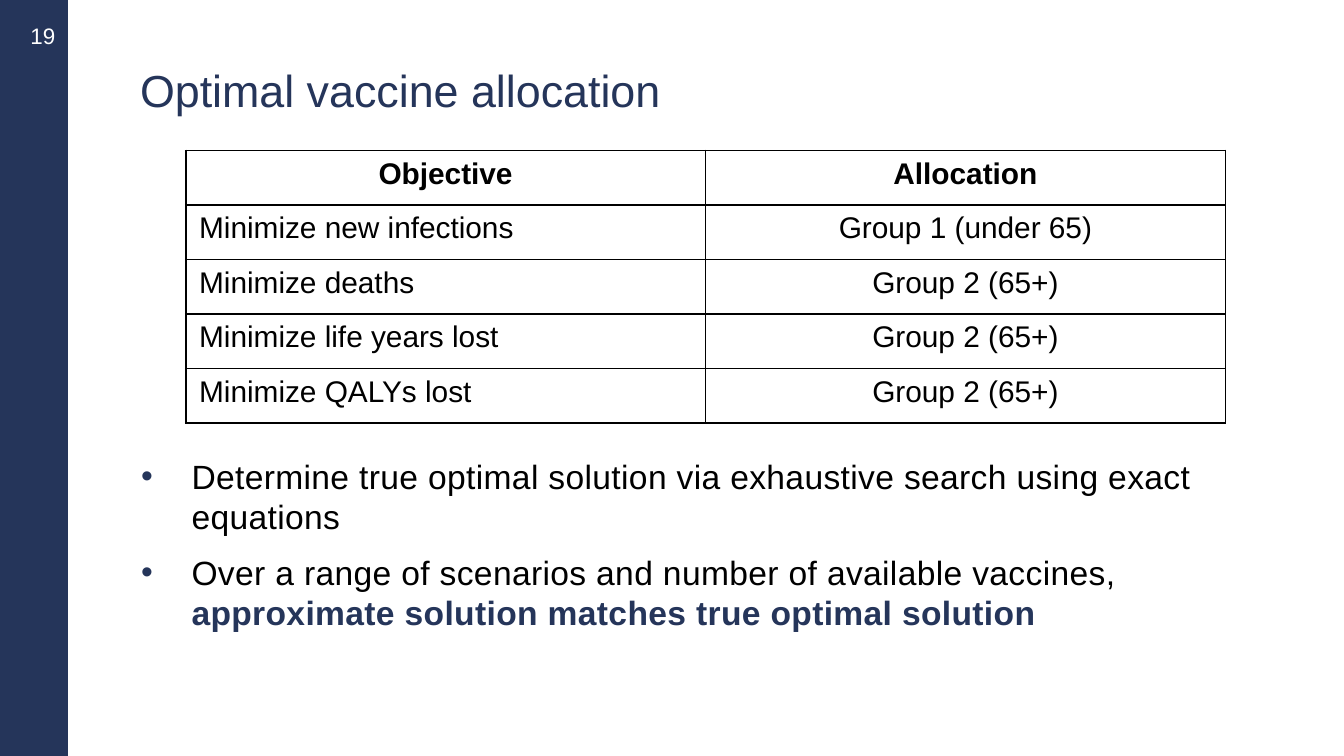
from pptx import Presentation
from pptx.dml.color import RGBColor
from pptx.enum.shapes import MSO_SHAPE
from pptx.enum.text import MSO_ANCHOR, MSO_AUTO_SIZE, PP_ALIGN
from pptx.oxml import parse_xml
from pptx.oxml.ns import nsdecls
from pptx.util import Pt

RECT = MSO_SHAPE.RECTANGLE
LEFT, CENTER = PP_ALIGN.LEFT, PP_ALIGN.CENTER
TOP, MIDDLE, BOTTOM = MSO_ANCHOR.TOP, MSO_ANCHOR.MIDDLE, MSO_ANCHOR.BOTTOM
NO_FIT = MSO_AUTO_SIZE.NONE

NAVY, BLACK, WHITE = "25355A", "000000", "FFFFFF"


def rgb(value):
    return RGBColor.from_string(value)


class Deck:
    font = "Arial"

    def __init__(self, width, height):
        self.prs = Presentation()
        self.prs.slide_width, self.prs.slide_height = Pt(width), Pt(height)
        self.s = self.prs.slides.add_slide(self.prs.slide_layouts[1])

    def place(self, sp, x, y, w, h):
        sp.left, sp.top, sp.width, sp.height = Pt(x), Pt(y), Pt(w), Pt(h)

    def frame(self, tf, anchor, insets, wrap=True):
        tf.auto_size = NO_FIT
        tf.word_wrap = wrap
        tf.vertical_anchor = anchor
        (tf.margin_left, tf.margin_top,
         tf.margin_right, tf.margin_bottom) = map(Pt, insets)

    def style(self, r, size, color, bold=False):
        r.font.name, r.font.size, r.font.bold = self.font, Pt(size), bold
        r.font.color.rgb = rgb(color)

    def band(self, x, y, w, h, color):
        sp = self.s.shapes.add_shape(RECT, Pt(x), Pt(y), Pt(w), Pt(h))
        sp.shadow.inherit = False
        sp.fill.solid()
        sp.fill.fore_color.rgb = rgb(color)
        sp.line.color.rgb = rgb(color)
        sp.line.width = Pt(0.75)

    def label(self, text, x, y, w, h, size, color):
        tf = self.s.shapes.add_textbox(Pt(x), Pt(y), Pt(w), Pt(h)).text_frame
        self.frame(tf, MIDDLE, (3.6, 0, 3.6, 0), wrap=False)
        tf.text = text
        p = tf.paragraphs[0]
        p.alignment = CENTER
        self.style(p.runs[0], size, color)

    def title(self, text, x, y, w, h):
        sp = self.s.shapes.title
        self.place(sp, x, y, w, h)
        tf = sp.text_frame
        self.frame(tf, BOTTOM, (0, 3.6, 7.2, 3.6))
        tf.text = text
        p = tf.paragraphs[0]
        p.alignment, p.line_spacing = LEFT, 0.85
        self.style(p.runs[0], 24, NAVY)

    def table(self, rows, x, y, w, h):
        tbl = self.s.shapes.add_table(
            len(rows), len(rows[0]), Pt(x), Pt(y), Pt(w), Pt(h)).table
        for i, row in enumerate(rows):
            for j, text in enumerate(row):
                cell = tbl.cell(i, j)
                cell.text = text
                p = cell.text_frame.paragraphs[0]
                p.alignment = CENTER if i == 0 or j > 0 else LEFT
                self.style(p.runs[0], 16, BLACK, bold=i == 0)
                self.borders(cell, BLACK)
                cell.fill.solid()
                cell.fill.fore_color.rgb = rgb(WHITE)

    def borders(self, cell, color):
        tcPr = cell._tc.get_or_add_tcPr()
        for side in ("lnL", "lnR", "lnT", "lnB"):
            tcPr.append(parse_xml(
                f'<a:{side} {nsdecls("a")} w="{Pt(1)}"><a:solidFill>'
                f'<a:srgbClr val="{color}"/></a:solidFill></a:{side}>'))

    def bullets(self, items, x, y, w, h):
        """Each item is a list of (text, color, bold) pieces."""
        sp = self.s.placeholders[1]
        self.place(sp, x, y, w, h)
        tf = sp.text_frame
        self.frame(tf, TOP, (0, 3.6, 0, 3.6))
        for i, pieces in enumerate(items):
            p = tf.add_paragraph() if i else tf.paragraphs[0]
            self.bullet(p, NAVY)
            p.space_before = Pt(4 if i else 0)
            p.space_after = Pt(4.3)
            for text, color, bold in pieces:
                r = p.add_run()
                r.text = text
                self.style(r, 18, color, bold)
                r._r.get_or_add_rPr().set("spc", "20")

    def bullet(self, p, color):
        pPr = p._p.get_or_add_pPr()
        pPr.set("marL", str(Pt(27)))
        pPr.set("indent", str(-Pt(27)))
        pPr.append(parse_xml(
            f'<a:buClr {nsdecls("a")}><a:srgbClr val="{color}"/></a:buClr>'))
        pPr.append(parse_xml(f'<a:buChar {nsdecls("a")} char="•"/>'))


def main():
    deck = Deck(720, 405)

    # Side band with page number
    deck.band(0, 0, 36, 405, NAVY)
    deck.label("19", 5, 1, 36, 36, 12, WHITE)

    # Title
    deck.title("Optimal vaccine allocation", 75, 28, 607, 38)

    # Allocation by objective
    older = "Group 2 (65+)"
    deck.table([
        ("Objective", "Allocation"),
        ("Minimize new infections", "Group 1 (under 65)"),
        ("Minimize deaths", older),
        ("Minimize life years lost", older),
        ("Minimize QALYs lost", older),
    ], 99.5, 80.6, 557, 146)

    # Findings
    deck.bullets([
        [("Determine true optimal solution via exhaustive search "
          "using exact equations", BLACK, False)],
        [("Over a range of scenarios and number of available vaccines, ",
          BLACK, False),
         ("approximate solution matches true optimal solution", NAVY, True)],
    ], 75.6, 240.5, 606, 127)

    deck.prs.save("out.pptx")


if __name__ == "__main__":
    main()
